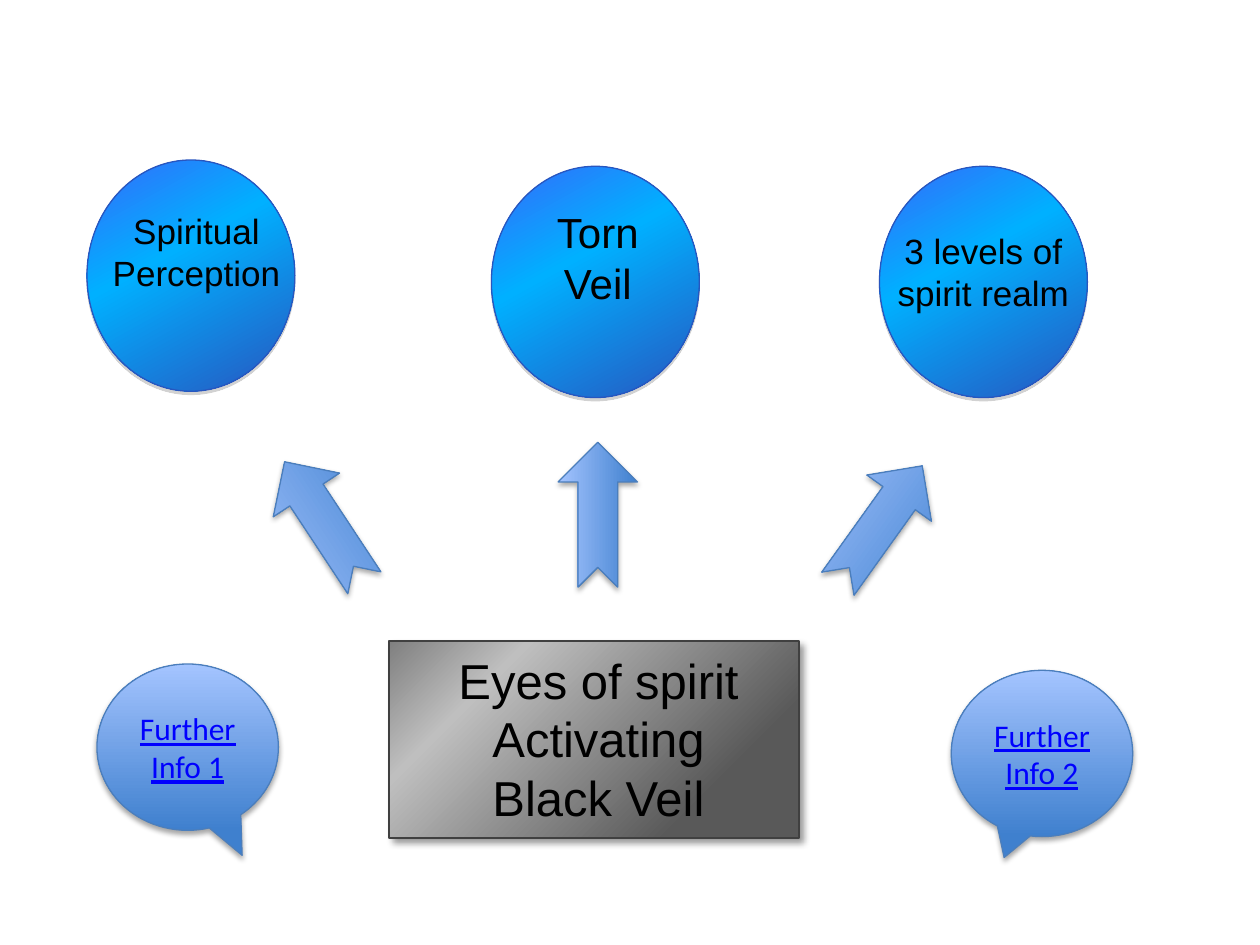
from dataclasses import dataclass

from lxml.etree import SubElement
from pptx import Presentation
from pptx.dml.color import RGBColor
from pptx.enum.shapes import MSO_SHAPE
from pptx.enum.text import MSO_ANCHOR, PP_ALIGN
from pptx.oxml.ns import qn
from pptx.util import Inches, Pt

COLUMNS, ROWS = 100, 75
WIDTH, HEIGHT = Inches(10), Inches(7.5)

Area = tuple[float, float, float, float]  # column, row, columns wide, rows high


@dataclass(frozen=True)
class Look:
    stops: tuple[tuple[int, str], ...]
    angle: int  # clockwise degrees
    line: str
    line_width: float
    shadow: tuple[str, int, float, float, int]  # colour, opacity, blur, distance, angle


@dataclass(frozen=True)
class Figure:
    kind: MSO_SHAPE
    area: Area
    look: Look
    rotation: float = 0
    tail: tuple[float, float] | None = None
    text: str = ""


@dataclass(frozen=True)
class Label:
    text: str
    area: Area
    size: int
    margins: tuple[float, float] = (0, 0)


BLACK_VEIL = Look(((22, "595959"), (77, "BFBFBF"), (100, "808080")), 225,
                  "404040", 1, ("000000", 40, 4, 3, 45))
BRIGHT = Look(((0, "336FFA"), (2, "336FFA"), (40, "00B0FF"), (100, "2856BF")), 61,
              "2856BF", 0.75, ("808080", 35, 0, 1.8, 90))
SOFT = Look(((0, "3F80CE"), (100, "A4C4FF")), 270,
            "4B7EBC", 0.75, ("000000", 35, 3.1, 1.8, 90))

TOPIC_SIZE = (16.5, 18.35)
CALLOUT_SIZE = (14.4, 13.2)
ARROW_SIZE = (11.5, 6.3)

FIGURES = [
    Figure(MSO_SHAPE.RECTANGLE, (30.9, 50.9, 32.5, 15.6), BLACK_VEIL),
    *(Figure(MSO_SHAPE.OVAL, (column, row, *TOPIC_SIZE), BRIGHT)
      for column, row in ((6.9, 12.7), (69.8, 13.2), (39, 13.2))),
    *(Figure(MSO_SHAPE.OVAL_CALLOUT, (column, row, *CALLOUT_SIZE), SOFT, tail=tail, text=text)
      for column, row, tail, text in ((75.5, 53.2, None, "Further Info 2"),
                                      (7.7, 52.7, (0.3, 0.65), "Further Info 1"))),
    *(Figure(MSO_SHAPE.NOTCHED_RIGHT_ARROW, (column, row, *ARROW_SIZE), SOFT, rotation)
      for column, row, rotation in ((41.7, 37.7, 270), (20, 38.3, 236.6), (64.1, 38.5, 305.6))),
]

LABELS = [
    Label("Eyes of spirit Activating\nBlack Veil", (31.6, 51.6, 31.8, 14.1), 28),
    Label("3 levels of spirit realm", (68.9, 18.2, 18.3, 10.8), 20),
    Label("Torn\nVeil", (38.3, 16.4, 18.3, 8.1), 24),
    Label("Spiritual\nPerception", (7.9, 16.1, 15.4, 7.7), 20, (0.1, 0.05)),
]


def place(area: Area) -> tuple[int, ...]:
    """Turn grid cells into slide lengths."""
    column, row, wide, high = area
    return (round(column * WIDTH / COLUMNS), round(row * HEIGHT / ROWS),
            round(wide * WIDTH / COLUMNS), round(high * HEIGHT / ROWS))


def rgb(colour: str) -> RGBColor:
    return RGBColor.from_string(colour)


def write(frame, text: str, *, font: str, size: int, colour: str, underline: bool = False) -> None:
    frame.word_wrap = True
    para = frame.paragraphs[0]
    para.text = text.replace("\n", "\v")
    para.alignment = PP_ALIGN.CENTER
    for span in para.runs:
        span.font.name = font
        span.font.size = Pt(size)
        span.font.color.rgb = rgb(colour)
        span.font.underline = underline


def apply_look(shape, look: Look) -> None:
    shape.fill.gradient()
    shape.fill.gradient_angle = (360 - look.angle) % 360
    properties = shape._element.spPr
    stop_list = properties.find(qn("a:gradFill")).find(qn("a:gsLst"))
    for stop in list(stop_list):
        stop_list.remove(stop)
    for position, colour in look.stops:
        stop = SubElement(stop_list, qn("a:gs"), pos=str(position * 1000))
        SubElement(stop, qn("a:srgbClr"), val=colour)

    shape.line.color.rgb = rgb(look.line)
    shape.line.width = Pt(look.line_width)

    shape.shadow.inherit = False
    colour, opacity, blur, distance, angle = look.shadow
    shadow = SubElement(properties.find(qn("a:effectLst")), qn("a:outerShdw"),
                        blurRad=str(Pt(blur)), dist=str(Pt(distance)),
                        dir=str(angle * 60000), rotWithShape="0")
    tint = SubElement(shadow, qn("a:srgbClr"), val=colour)
    SubElement(tint, qn("a:alpha"), val=str(opacity * 1000))


def draw_figure(page, figure: Figure) -> None:
    shape = page.shapes.add_shape(figure.kind, *place(figure.area))
    shape.rotation = figure.rotation
    if figure.tail:
        shape.adjustments[0], shape.adjustments[1] = figure.tail
    apply_look(shape, figure.look)
    if figure.text:
        shape.text_frame.vertical_anchor = MSO_ANCHOR.MIDDLE
        write(shape.text_frame, figure.text, font="Calibri", size=18,
              colour="0000FF", underline=True)


def draw_label(page, label: Label) -> None:
    frame = page.shapes.add_textbox(*place(label.area)).text_frame
    side, end = label.margins
    frame.margin_left = frame.margin_right = Inches(side)
    frame.margin_top = frame.margin_bottom = Inches(end)
    write(frame, label.text, font="Arial", size=label.size, colour="000000")


def main() -> None:
    deck = Presentation()
    deck.slide_width, deck.slide_height = WIDTH, HEIGHT
    page = deck.slides.add_slide(deck.slide_layouts[6])
    for figure in FIGURES:
        draw_figure(page, figure)
    for label in LABELS:
        draw_label(page, label)
    deck.save("out.pptx")


if __name__ == "__main__":
    main()
